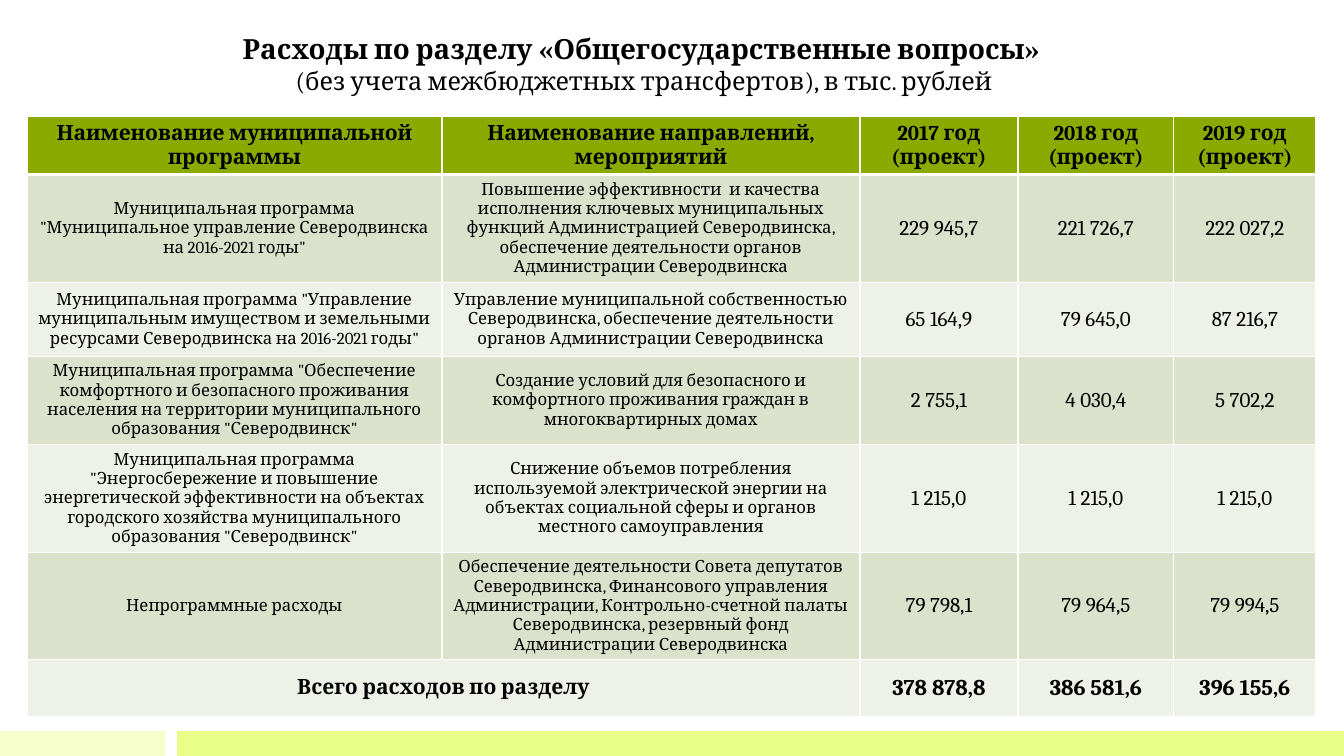
from dataclasses import dataclass

from lxml import etree
from pptx import Presentation
from pptx import util as u
from pptx.dml.color import RGBColor
from pptx.enum import shapes, text
from pptx.oxml import ns

PX = 914400 / 100.8  # EMU in one px


@dataclass(frozen=True)
class Theme:
    font: str = "Cambria"
    ink: str = "000000"
    line: str = "FFFFFF"
    header: str = "8BAA00"
    bands: tuple = ("DAE2CC", "EEF1E7")
    footer_pale: str = "F6FFCC"
    footer_bright: str = "E9FF88"
    title: float = 19.8
    subtitle: float = 18
    large: float = 15
    small: float = 12
    total: float = 16


THEME = Theme()

COLUMNS = [415, 418, 158, 156, 142]
ROWS = [58, 108, 74, 88, 108, 107, 57]
HEADER = ["Наименование муниципальной программы", "Наименование направлений, мероприятий",
          "2017 год (проект)", "2018 год (проект)", "2019 год (проект)"]
PROGRAMMES = [
    ['Муниципальная программа "Муниципальное управление Северодвинска на 2016-2021 годы"',
     "Повышение эффективности  и качества исполнения ключевых муниципальных функций "
     "Администрацией Северодвинска, обеспечение деятельности органов Администрации Северодвинска",
     "229 945,7", "221 726,7", "222 027,2"],
    ['Муниципальная программа "Управление муниципальным имуществом и земельными ресурсами '
     'Северодвинска на 2016-2021 годы"',
     "Управление муниципальной собственностью Северодвинска, обеспечение деятельности органов "
     "Администрации Северодвинска",
     "65 164,9", "79 645,0", "87 216,7"],
    ['Муниципальная программа "Обеспечение комфортного и безопасного проживания населения на '
     'территории муниципального образования "Северодвинск"',
     "Создание условий для безопасного и комфортного проживания граждан в многоквартирных домах",
     "2 755,1", "4 030,4", "5 702,2"],
    ['Муниципальная программа "Энергосбережение и повышение энергетической эффективности на '
     'объектах городского хозяйства муниципального образования "Северодвинск"',
     "Снижение объемов потребления используемой электрической энергии на объектах социальной "
     "сферы и органов местного самоуправления",
     "1 215,0", "1 215,0", "1 215,0"],
    ["Непрограммные расходы",
     "Обеспечение деятельности Совета депутатов Северодвинска, Финансового управления "
     "Администрации, Контрольно-счетной палаты Северодвинска, резервный фонд Администрации "
     "Северодвинска",
     "79 798,1", "79 964,5", "79 994,5"],
]
TOTAL = ["Всего расходов по разделу", "", "378 878,8", "386 581,6", "396 155,6"]


def px(n):
    return u.Emu(round(n * PX))


def style_font(font, size, bold):
    font.name = THEME.font
    font.size = u.Pt(size)
    font.bold = bold
    font.color.rgb = RGBColor.from_string(THEME.ink)


def add_title(slide, left, top, width, height):
    title = slide.shapes.title
    title.left, title.top, title.width, title.height = map(px, (left, top, width, height))
    tf = title.text_frame
    tf.word_wrap = True
    tf.auto_size = text.MSO_AUTO_SIZE.NONE
    tf.vertical_anchor = text.MSO_ANCHOR.MIDDLE
    p = tf.paragraphs[0]
    p.alignment = text.PP_ALIGN.CENTER
    r = p.add_run()
    r.text = "Расходы по разделу «Общегосударственные вопросы» "
    style_font(r.font, THEME.title, True)
    p.add_line_break()
    r = p.add_run()
    r.text = "(без учета межбюджетных трансфертов), в тыс. рублей"
    style_font(r.font, THEME.subtitle, False)


def add_borders(cell, widths):
    tc_pr = cell._tc.get_or_add_tcPr()
    for side, width in widths.items():
        ln = etree.SubElement(tc_pr, ns.qn(f"a:ln{side}"), w=str(u.Pt(width)))
        fill = etree.SubElement(ln, ns.qn("a:solidFill"))
        etree.SubElement(fill, ns.qn("a:srgbClr"), val=THEME.line)


def fill_cell(cell, words, size, bold, fill, borders):
    add_borders(cell, borders)
    cell.fill.solid()
    cell.fill.fore_color.rgb = RGBColor.from_string(fill)
    cell.vertical_anchor = text.MSO_ANCHOR.MIDDLE
    p = cell.text_frame.paragraphs[0]
    p.text = words
    p.alignment = text.PP_ALIGN.CENTER
    style_font(p.font, size, bold)


def add_expenses(slide, left, top):
    rows = [HEADER, *PROGRAMMES, TOTAL]
    last = len(rows) - 1
    table = slide.shapes.add_table(len(rows), len(COLUMNS), px(left), px(top),
                                   px(sum(COLUMNS)), px(sum(ROWS))).table
    for column, width in zip(table.columns, COLUMNS):
        column.width = px(width)
    for row, height in zip(table.rows, ROWS):
        row.height = px(height)
    for i, row in enumerate(rows):
        fill = THEME.bands[(i - 1) % 2] if i else THEME.header
        # The rule under the header is thicker than the others
        borders = {"L": 1, "R": 1, "T": 3 if i == 1 else 1, "B": 1 if i else 3}
        for j, words in enumerate(row):
            size = THEME.large
            if 0 < i < last and j < 2:
                size = THEME.small
            elif i == last and j >= 2:
                size = THEME.total
            fill_cell(table.cell(i, j), words, size, i in (0, last), fill, borders)
    table.cell(last, 0).merge(table.cell(last, 1))


def add_footer(slide, left, top, width, height):
    pale_width, gap = 165, 12
    bright_left = left + pale_width + gap
    bars = [(left, pale_width, THEME.footer_pale),
            (bright_left, left + width - bright_left, THEME.footer_bright)]
    for x, w, color in bars:
        sp = slide.shapes.add_shape(shapes.MSO_SHAPE.RECTANGLE, px(x), px(top), px(w), px(height))
        sp.shadow.inherit = False
        sp.fill.solid()
        sp.fill.fore_color.rgb = RGBColor.from_string(color)
        sp.line.fill.background()


def main():
    prs = Presentation()
    prs.slide_width, prs.slide_height = px(1344), px(756)
    slide = prs.slides.add_slide(prs.slide_layouts[5])
    add_footer(slide, 0, 731, 1344, 25)
    add_title(slide, 27, 25, 1234, 77)
    add_expenses(slide, 27, 116)
    prs.save("out.pptx")


if __name__ == "__main__":
    main()
